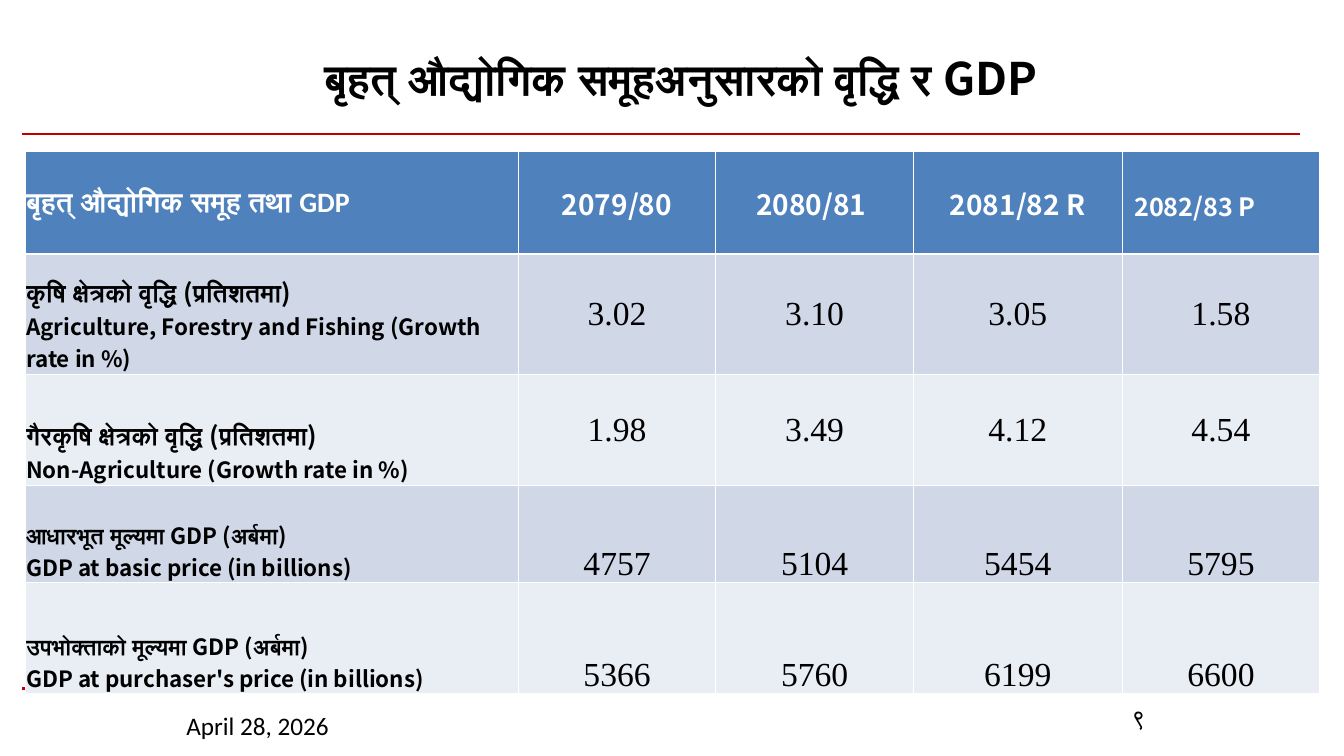
from pptx import Presentation
from pptx.dml.color import RGBColor
from pptx.enum.shapes import MSO_CONNECTOR
from pptx.enum.text import MSO_ANCHOR as Anchor, PP_ALIGN as Align
from pptx.oxml.ns import qn
from lxml import etree

PX = 9144  # 100 px to the inch
NOTO = "Noto Sans CJK JP"
TIMES = "Times New Roman"


def tint(hue):
    return RGBColor.from_string(hue)


def write(para, text, hue="000000", **form):
    """Add a run with the given font values."""
    run = para.add_run()
    run.text = text
    for key, value in form.items():
        setattr(run.font, key, value * 12700 if key == "size" else value)
    run.font.color.rgb = tint(hue)


deck = Presentation()
deck.slide_width, deck.slide_height = 1333 * PX, 750 * PX
slide = deck.slides.add_slide(deck.slide_layouts[5])
shapes = slide.shapes

# Title
title = shapes.title
title.left, title.top, title.width, title.height = [
    n * PX for n in (192, 25, 967, 103)]
frame = title.text_frame
frame.vertical_anchor = Anchor.MIDDLE
para = frame.paragraphs[0]
para.alignment = Align.CENTER
write(para, "बृहत् औद्योगिक समूहअनुसारको वृद्धि र ", size=31, name="Calibri", bold=True)
write(para, "GDP", size=32, name=NOTO, bold=True)

# Red rules
for y in (133, 683):
    rule = shapes.add_connector(
        MSO_CONNECTOR.STRAIGHT, 22 * PX, y * PX, 1289 * PX, y * PX)
    rule.line.color.rgb = tint("C00000")
    rule.line.width = 19050
    etree.SubElement(rule._element.spPr, qn("a:effectLst"))

# Table
heads = ["बृहत् औद्योगिक समूह तथा GDP", "2079/80", "2080/81 ", "2081/82 R", "2082/83 P"]
rows = [  # label, label size, first line spacing, English label, anchor, values
    ("कृषि क्षेत्रको वृद्धि (प्रतिशतमा)", 18, 1.5,
     "Agriculture, Forestry and Fishing (Growth rate in %)",
     Anchor.MIDDLE, ["3.02", "3.10", "3.05", "1.58"]),
    ("गैरकृषि क्षेत्रको वृद्धि (प्रतिशतमा)", 18, 1.5,
     "Non-Agriculture (Growth rate in %)",
     Anchor.MIDDLE, ["1.98", "3.49", "4.12", "4.54"]),
    ("आधारभूत मूल्यमा GDP (अर्बमा)", 16, 1.5,
     "GDP at basic price (in billions)",
     Anchor.BOTTOM, ["4757", "5104", "5454", "5795"]),
    ("उपभोक्ताको मूल्यमा GDP (अर्बमा)", 16, None,
     "GDP at purchaser's price (in billions)",
     Anchor.BOTTOM, ["5366", "5760", "6199", "6600"]),
]
wide = [489, 196, 196, 207, 196]
high = [102, 112, 110, 97, 110]
table = shapes.add_table(
    len(high), len(wide), 25 * PX, 150 * PX, sum(wide) * PX, sum(high) * PX).table
for col, n in zip(table.columns, wide):
    col.width = n * PX
for r, n in enumerate(high):
    table.rows[r].height = n * PX
    for cell in table.rows[r].cells:
        cell.margin_left = cell.margin_top = cell.margin_right = PX
        cell.margin_bottom = 0
        cell.fill.solid()
        cell.fill.fore_color.rgb = tint(
            "4F81BD" if r == 0 else "D0D8E8" if r % 2 else "E9EDF4")

last = len(heads) - 1
for c, head in enumerate(heads):
    cell = table.cell(0, c)
    cell.vertical_anchor = Anchor.MIDDLE
    para = cell.text_frame.paragraphs[0]
    if 0 < c < last:
        para.alignment = Align.CENTER
    write(para, head, "FFFFFF", size=18 if c == last else 20,
          name=NOTO if c else "Calibri", bold=True)
cell.margin_left, cell.margin_top = 12 * PX, 6 * PX

for r, (label, size, gap, english, anchor, values) in enumerate(rows, 1):
    cell = table.cell(r, 0)
    cell.vertical_anchor = Anchor.BOTTOM
    frame = cell.text_frame
    para = frame.paragraphs[0]
    para.line_spacing = gap
    write(para, label, size=size, name=NOTO, bold=True)
    write(frame.add_paragraph(), english, size=16, name=NOTO, bold=True)
    for c, value in enumerate(values, 1):
        cell = table.cell(r, c)
        cell.vertical_anchor = anchor
        para = cell.text_frame.paragraphs[0]
        para.alignment = Align.CENTER
        write(para, value, size=24, name=TIMES, bold=False)

# Date and page number
for text, font, align, box in (
        ("April 28, 2026", "Calibri", Align.LEFT, (175, 700, 217, 41)),
        ("९", "Roboto", Align.CENTER, (1100, 692, 58, 48))):
    frame = shapes.add_textbox(*[n * PX for n in box]).text_frame
    frame.word_wrap = True
    para = frame.paragraphs[0]
    para.alignment = align
    write(para, text, size=18, name=font)

deck.save("out.pptx")
